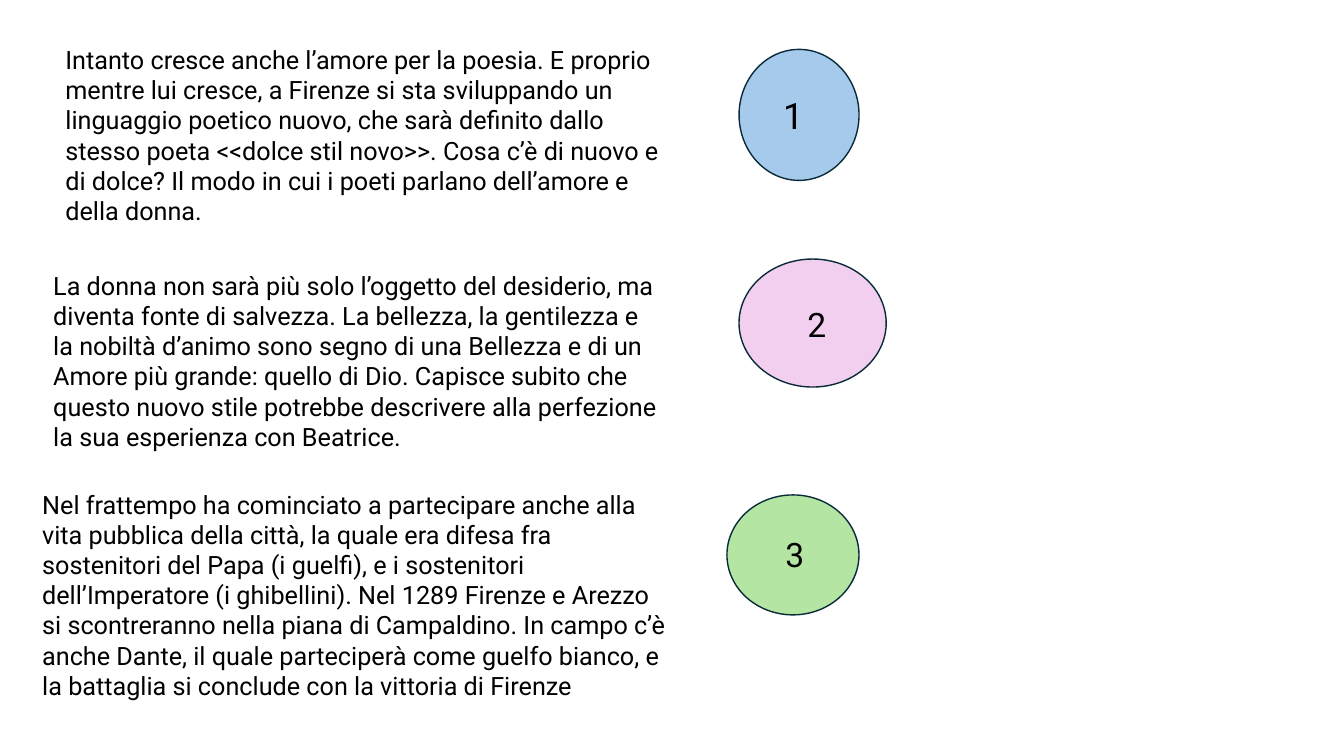
"""Build a slide of three numbered passages on Dante's youth, each beside a coloured ellipse."""
from pptx import Presentation
from pptx.dml.color import RGBColor
from pptx.enum.shapes import MSO_SHAPE
from pptx.enum.text import MSO_AUTO_SIZE
from pptx.util import Inches, Pt

ELLIPSE = MSO_SHAPE.OVAL
GROW = MSO_AUTO_SIZE.SHAPE_TO_FIT_TEXT
BLANK_LAYOUT = 6

COLOURS = {
    "text": "000000",
    "outline": "092A39",
    "blue": "A6CAEC",
    "pink": "F2CFEE",
    "green": "B4E5A2",
}

PASSAGES = [
    {
        "text": "Intanto cresce anche l’amore per la poesia. E proprio mentre lui cresce, "
                "a Firenze si sta sviluppando un linguaggio poetico nuovo, che sarà definito "
                "dallo stesso poeta <<dolce stil novo>>. Cosa c’è di nuovo e di dolce? Il modo "
                "in cui i poeti parlano dell’amore e della donna.",
        "text_at": (0.55, 0.39, 6.12, 1.92),
        "ellipse_at": (7.33, 0.49, 1.19, 1.3),
        "number_at": (7.67, 0.87, 2, 0.54),
        "number_size": 26,
        "colour": "blue",
    },
    {
        "text": "La donna non sarà più solo l’oggetto del desiderio, ma diventa fonte di "
                "salvezza. La bellezza, la gentilezza e la nobiltà d’animo sono segno di una "
                "Bellezza e di un Amore più grande: quello di Dio. Capisce subito che questo "
                "nuovo stile potrebbe descrivere alla perfezione la sua esperienza con Beatrice.",
        "text_at": (0.43, 2.63, 6.24, 1.92),
        "ellipse_at": (7.33, 2.57, 1.46, 1.27),
        "number_at": (7.91, 2.97, 2, 0.5),
        "number_size": 24,
        "colour": "pink",
    },
    {
        "text": "Nel frattempo ha cominciato a partecipare anche alla vita pubblica della "
                "città, la quale era difesa fra sostenitori del Papa (i guelfi), e i "
                "sostenitori dell’Imperatore (i ghibellini). Nel 1289 Firenze e Arezzo si "
                "scontreranno nella piana di Campaldino. In campo c’è anche Dante, il quale "
                "parteciperà come guelfo bianco, e la battaglia si conclude con la vittoria "
                "di Firenze",
        "text_at": (0.32, 4.8, 6.45, 2.22),
        "ellipse_at": (7.21, 4.91, 1.31, 1.19),
        "number_at": (7.69, 5.25, 2, 0.5),
        "number_size": 24,
        "colour": "green",
    },
]


def colour(name):
    return RGBColor.from_string(COLOURS[name])


def add_text(page, text, place, size):
    box = page.shapes.add_textbox(*map(Inches, place))
    box.text_frame.word_wrap = True
    box.text_frame.auto_size = GROW
    span = box.text_frame.paragraphs[0].add_run()
    span.text = text
    for name, value in {"name": "Roboto", "size": Pt(size)}.items():
        setattr(span.font, name, value)
    span.font.color.rgb = colour("text")


def add_ellipse(page, place, fill):
    ellipse = page.shapes.add_shape(ELLIPSE, *map(Inches, place))
    ellipse.shadow.inherit = False
    ellipse.fill.solid()
    ellipse.fill.fore_color.rgb = colour(fill)
    ellipse.line.color.rgb = colour("outline")
    ellipse.line.width = Pt(1)


def main():
    deck = Presentation()
    deck.slide_width, deck.slide_height = Inches(13.33), Inches(7.5)
    page = deck.slides.add_slide(deck.slide_layouts[BLANK_LAYOUT])
    for number, passage in enumerate(PASSAGES, start=1):
        add_text(page, passage["text"], passage["text_at"], 18)
        add_ellipse(page, passage["ellipse_at"], passage["colour"])
        add_text(page, str(number), passage["number_at"], passage["number_size"])
    deck.save("out.pptx")


if __name__ == "__main__":
    main()
